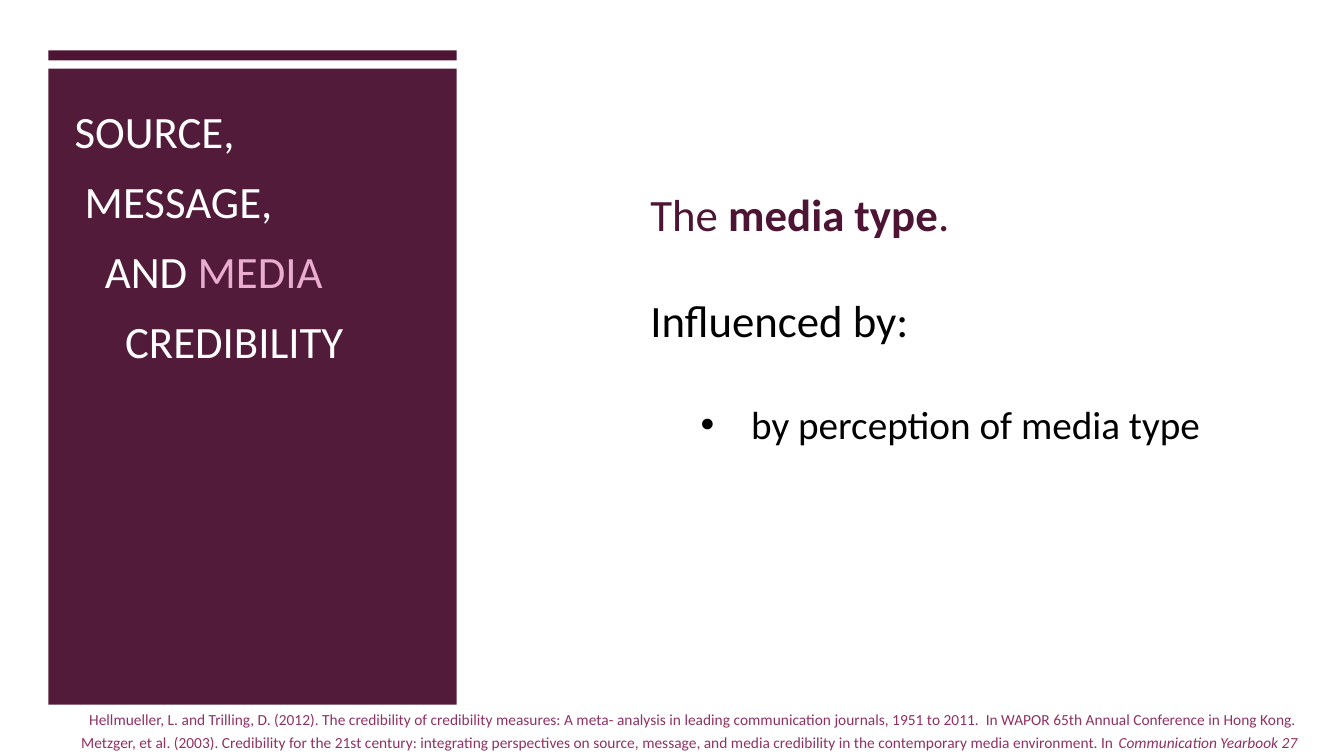
from pptx import Presentation
from pptx.dml.color import RGBColor
from pptx.enum.shapes import MSO_SHAPE
from pptx.enum.text import MSO_ANCHOR, MSO_AUTO_SIZE, PP_ALIGN
from pptx.oxml.ns import qn
from pptx.util import Inches, Pt
from lxml import etree

RECTANGLE = MSO_SHAPE.RECTANGLE
TOP = MSO_ANCHOR.TOP
NO_FIT = MSO_AUTO_SIZE.NONE
LEFT, RIGHT = PP_ALIGN.LEFT, PP_ALIGN.RIGHT

WIDTH, HEIGHT = 13.33, 7.5
FONT = "Calibri"
COLORS = {"plum": "4D1434", "pink": "EAADCF", "berry": "903163",
          "white": "FFFFFF", "black": "000000"}

# Each title line: indent in inches, then its spans (text, color)
TITLE_LINES = [
    (0, [("SOURCE,", "white")]),
    (0.1, [("MESSAGE,", "white")]),
    (0.3, [("AND ", "white"), ("MEDIA", "pink")]),
    (0.5, [("CREDIBILITY", "white")]),
]
REFERENCES = [
    [("Hellmueller, L. and Trilling, D. (2012). The credibility of credibility "
      "measures: A meta- analysis in leading communication journals, 1951 to 2011.  "
      "In WAPOR 65th Annual Conference in Hong Kong.", False)],
    [("Metzger, et al. (2003). Credibility for the 21st century: integrating "
      "perspectives on source, message, and media credibility in the contemporary "
      "media environment. In ", False), ("Communication Yearbook 27", True)],
]


def place(shape, box):
    shape.left, shape.top, shape.width, shape.height = map(Inches, box)


def prepare_frame(shape):
    frame = shape.text_frame
    frame.word_wrap = True
    frame.auto_size = NO_FIT
    frame.vertical_anchor = TOP
    return frame


def next_paragraph(frame, index, align=LEFT, after=0):
    para = frame.paragraphs[0] if index == 0 else frame.add_paragraph()
    para.alignment = align
    para.space_before, para.space_after = Pt(0), Pt(after)
    return para


def add_span(para, text, size, color, bold=False, italic=False):
    span = para.add_run()
    span.text = text
    font = span.font
    font.name, font.size = FONT, Pt(size)
    font.bold, font.italic = bold, italic
    font.color.rgb = RGBColor.from_string(COLORS[color])


def set_indent(para, margin, hanging=0, bullet=None):
    properties = para._p.get_or_add_pPr()
    properties.set("marL", str(Inches(margin)))
    properties.set("indent", str(-Inches(hanging)))
    if bullet:
        font = etree.SubElement(properties, qn("a:buFont"))
        font.set("typeface", "Arial")
        etree.SubElement(properties, qn("a:buChar")).set("char", bullet)
    else:
        etree.SubElement(properties, qn("a:buNone"))


def add_block(page, box, opacity=100):
    block = page.shapes.add_shape(RECTANGLE, *map(Inches, box))
    block.shadow.inherit = False
    block.fill.solid()
    block.fill.fore_color.rgb = RGBColor.from_string(COLORS["plum"])
    block.line.fill.background()
    color = block.fill._xPr.find(".//" + qn("a:srgbClr"))
    etree.SubElement(color, qn("a:alpha")).set("val", str(opacity * 1000))


def build_sidebar(page, box):
    left, top, width, height = box
    # Thin bar above the main panel
    add_block(page, (left, top + 0.18, width, height - 0.18), opacity=97)
    add_block(page, (left, top, width, 0.1))

    # Stepped title, brought in front of the panel
    title = page.shapes.title
    page.shapes._spTree.append(title._element)
    place(title, (left + 0.16, top + 0.48, width - 0.32, height - 1.19))
    frame = prepare_frame(title)
    for index, (indent, spans) in enumerate(TITLE_LINES):
        para = next_paragraph(frame, index, after=11.6)
        set_indent(para, indent)
        for text, color in spans:
            add_span(para, text, 32, color)


def build_content(page, box):
    body = page.placeholders[1]
    place(body, box)
    frame = prepare_frame(body)

    # Lead line
    lead = next_paragraph(frame, 0, after=37.5)
    set_indent(lead, 0.5)
    for text, bold in [("The ", False), ("media type", True), (".", False)]:
        add_span(lead, text, 32, "plum", bold=bold)

    # Influences
    heading = next_paragraph(frame, 1, after=38.5)
    set_indent(heading, 0.5)
    add_span(heading, "Influenced by:", 32, "black")
    influence = next_paragraph(frame, 2)
    influence.level = 1
    set_indent(influence, 1.5, hanging=0.5, bullet="•")
    add_span(influence, "by perception of media type", 28, "black")


def build_references(page, box):
    frame = prepare_frame(page.shapes.add_textbox(*map(Inches, box)))
    for index, spans in enumerate(REFERENCES):
        para = next_paragraph(frame, index, align=RIGHT, after=3)
        for text, italic in spans:
            add_span(para, text, 11, "berry", italic=italic)


def main():
    deck = Presentation()
    deck.slide_width, deck.slide_height = Inches(WIDTH), Inches(HEIGHT)
    page = deck.slides.add_slide(deck.slide_layouts[1])
    page.background.fill.solid()
    page.background.fill.fore_color.rgb = RGBColor.from_string(COLORS["white"])
    build_sidebar(page, (0.48, 0.5, 4.05, 6.49))
    build_content(page, (5.85, 1.8, WIDTH / 2, 4.14))
    build_references(page, (0.22, 7, 12.75, 0.5))
    deck.save("out.pptx")


if __name__ == "__main__":
    main()
